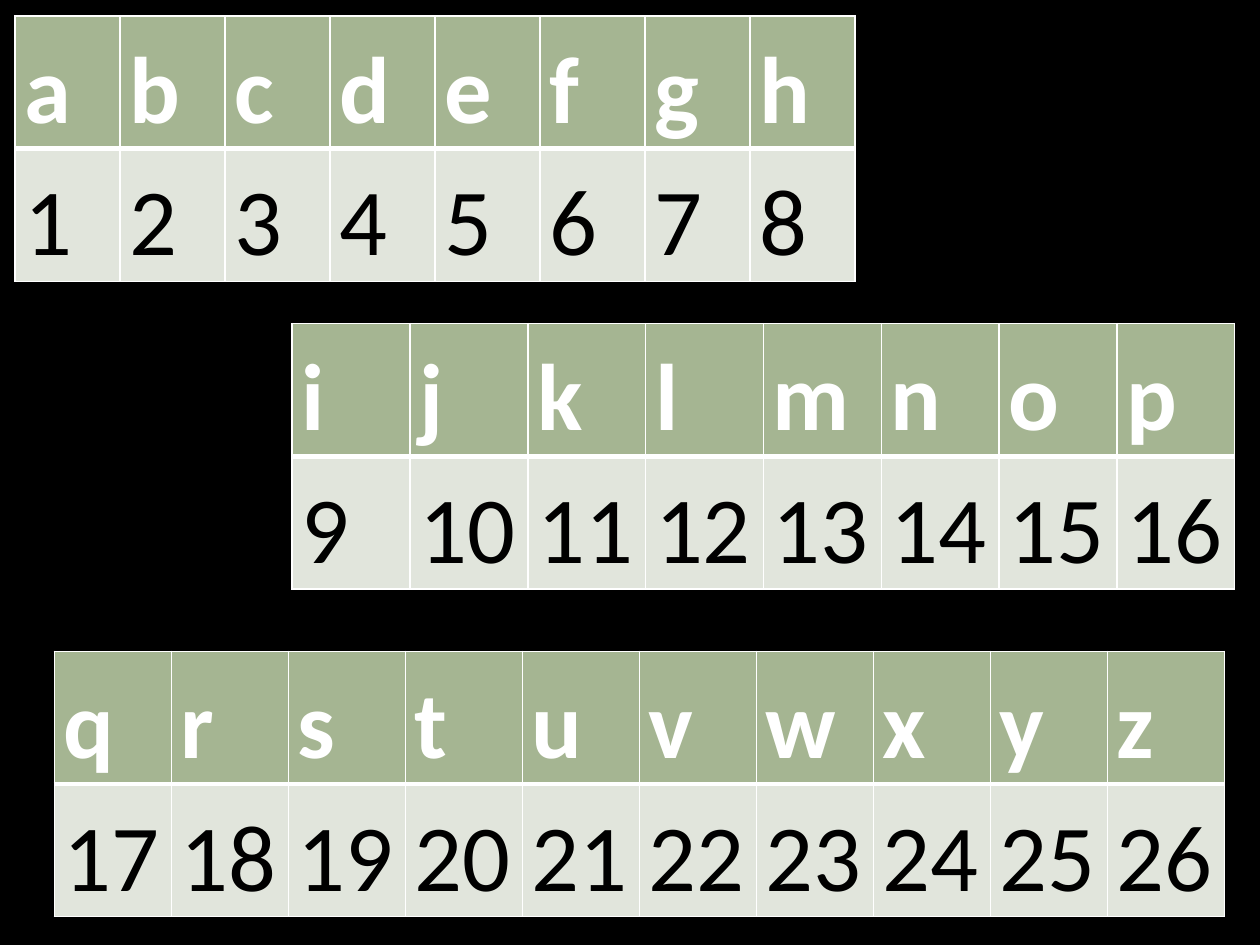
"""Build a slide of three tables that number the letters of the alphabet."""
import dataclasses

import lxml.etree
import pptx
import pptx.dml.color
import pptx.oxml.ns
import pptx.util

Pt = pptx.util.Pt
RGB = pptx.dml.color.RGBColor.from_string


@dataclasses.dataclass(frozen=True)
class Theme:
    background: str = "000000"
    header_fill: str = "A5B592"
    header_text: str = "FFFFFF"
    body_fill: str = "E1E5DC"
    body_text: str = "000000"
    border: str = "FFFFFF"
    font: str = "Calibri"
    size: float = 54
    line_spacing: float = 1.15
    inset: float = 5.4
    thin: float = 1
    thick: float = 3


THEME = Theme()


def set_border(cell, side, width):
    tcPr = cell._tc.get_or_add_tcPr()
    qn = pptx.oxml.ns.qn
    ln = lxml.etree.SubElement(tcPr, qn(f"a:ln{side}"), w=str(Pt(width)))
    fill = lxml.etree.SubElement(ln, qn("a:solidFill"))
    lxml.etree.SubElement(fill, qn("a:srgbClr"), val=THEME.border)


def fill_cell(cell, text, header):
    widths = {"L": THEME.thin, "R": THEME.thin,
              "T": THEME.thin if header else THEME.thick,
              "B": THEME.thick if header else THEME.thin}
    for side, width in widths.items():
        set_border(cell, side, width)
    cell.fill.solid()
    cell.fill.fore_color.rgb = RGB(THEME.header_fill if header else THEME.body_fill)
    cell.margin_left = cell.margin_right = Pt(THEME.inset)
    cell.margin_top = cell.margin_bottom = 0
    p = cell.text_frame.paragraphs[0]
    p.text = text
    p.line_spacing = THEME.line_spacing
    p.font.name = THEME.font
    p.font.size = Pt(THEME.size)
    p.font.bold = header
    p.font.color.rgb = RGB(THEME.header_text if header else THEME.body_text)


def add_letter_table(s, letters, left, top, width, height):
    n = len(letters)
    table = s.shapes.add_table(2, n, Pt(left), Pt(top), Pt(width), Pt(height)).table
    for i, letter in enumerate(letters):
        table.columns[i].width = Pt(width / n)
        fill_cell(table.cell(0, i), letter, True)
        fill_cell(table.cell(1, i), str(ord(letter) - ord("a") + 1), False)


def main():
    prs = pptx.Presentation()
    prs.slide_width, prs.slide_height = Pt(720), Pt(540)
    s = prs.slides.add_slide(prs.slide_layouts[6])
    s.background.fill.solid()
    s.background.fill.fore_color.rgb = RGB(THEME.background)
    add_letter_table(s, "abcdefgh", 8.6, 9.2, 480, 140.4)
    add_letter_table(s, "ijklmnop", 167, 185, 538.6, 140.4)
    add_letter_table(s, "qrstuvwxyz", 31, 372.2, 668.9, 144.7)
    prs.save("out.pptx")


if __name__ == "__main__":
    main()
